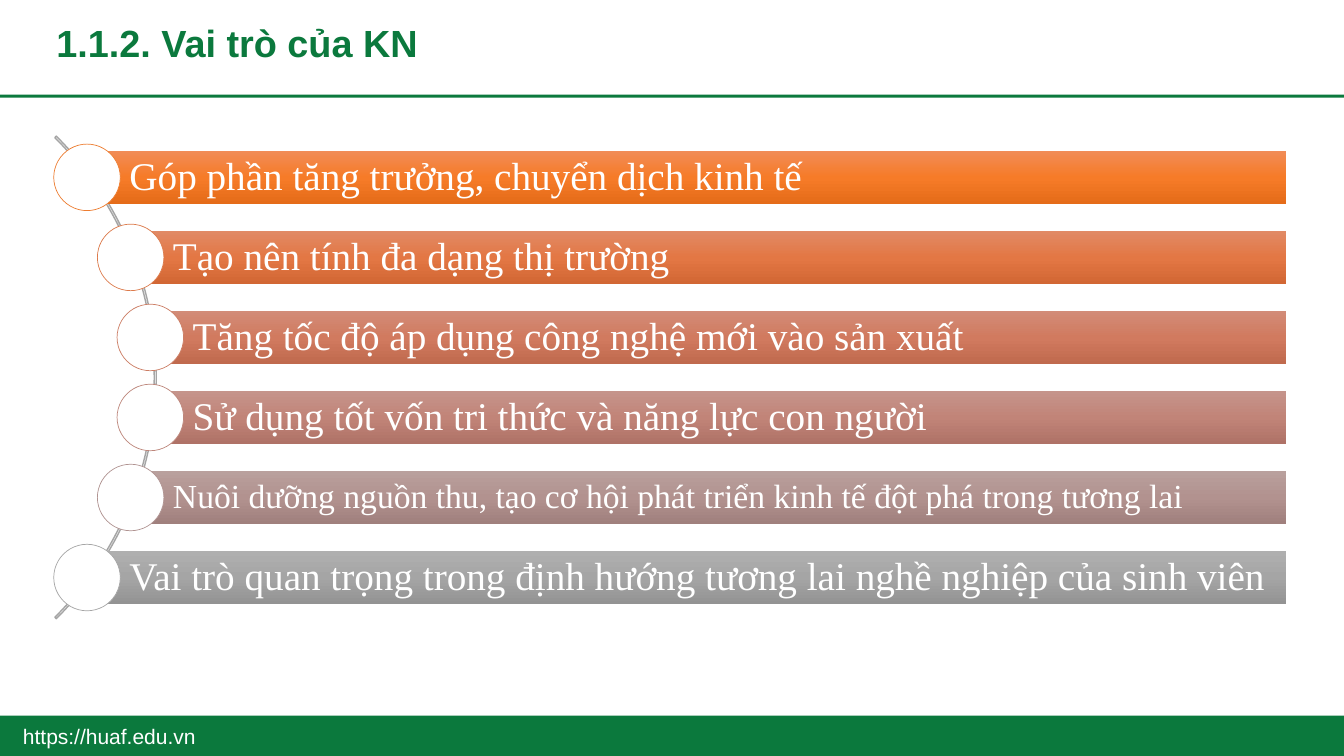
import copy
import math

import pptx
import pptx.dml.color
import pptx.enum.shapes
import pptx.enum.text
import pptx.util

Inches = pptx.util.Inches
Pt = pptx.util.Pt
MSO_SHAPE = pptx.enum.shapes.MSO_SHAPE
ANCHOR = pptx.enum.text.MSO_ANCHOR
ALIGN = pptx.enum.text.PP_ALIGN

# Content: text, size role, bar gradient (top, middle, bottom), circle outline
TITLE = "1.1.2. Vai trò của KN"
WEBSITE = "https://huaf.edu.vn"
ROLES = [
    ("Góp phần tăng trưởng, chuyển dịch kinh tế", "role",
     ("F18C57", "F67B28", "E56C19"), "ED7D31"),
    ("Tạo nên tính đa dạng thị trường", "role",
     ("E18A66", "E37744", "D26734"), "DC7A4B"),
    ("Tăng tốc độ áp dụng công nghệ mới vào sản xuất", "role",
     ("D28C78", "D17A5F", "C06A4E"), "CC7D64"),
    ("Sử dụng tốt vốn tri thức và năng lực con người", "role",
     ("C5948B", "C18478", "AF7267"), "BD867B"),
    ("Nuôi dưỡng nguồn thu, tạo cơ hội phát triển kinh tế đột phá trong tương lai",
     "long_role", ("B9A09D", "B2928F", "A0807D"), "B09391"),
    ("Vai trò quan trọng trong định hướng tương lai nghề nghiệp của sinh viên", "role",
     ("AFAFAF", "A5A5A5", "939393"), "A5A5A5"),
]

THEME = {
    "green": "0B793D", "white": "FFFFFF", "grey": "A5A5A5",
    "sans": "Arial", "serif": "Times New Roman",
    "title": 27, "role": 28, "long_role": 24, "website": 15,
}

# Layout, in inches
SLIDE_W, SLIDE_H = 13.33, 7.5
FOOTER_H = 0.4
ARC_LEFT, ARC_TOP, ARC_SIZE = -5.22, 0.36, 6.77
ARC_X, ARC_Y = ARC_LEFT + ARC_SIZE / 2, ARC_TOP + ARC_SIZE / 2
CENTRE_RADIUS = 3.35
ROW_PITCH = 0.794
BAR_RIGHT, BAR_H = 12.76, 0.53
CIRCLE = 0.66


def rgb(code):
    return pptx.dml.color.RGBColor.from_string(code)


def add_figure(slide, kind, box, fill=None, outline=None, width=1):
    figure = slide.shapes.add_shape(kind, *map(Inches, box))
    figure.shadow.inherit = False
    if fill:
        figure.fill.solid()
        figure.fill.fore_color.rgb = rgb(fill)
    else:
        figure.fill.background()
    if outline:
        figure.line.color.rgb = rgb(outline)
        figure.line.width = Pt(width)
    else:
        figure.line.fill.background()
    return figure


def shade_down(bar, colours):
    bar.fill.gradient()
    bar.fill.gradient_angle = 270
    first = bar.fill.gradient_stops[0]
    first.color.rgb = rgb(colours[0])
    stops = bar._element.spPr.find(".//" + pptx.oxml.ns.qn("a:gsLst"))
    stops.insert(1, copy.deepcopy(stops[0]))
    for i, (stop, colour) in enumerate(zip(bar.fill.gradient_stops, colours)):
        stop.position = i / 2
        stop.color.rgb = rgb(colour)


def write(holder, text, font, size, colour, bold=False, frame=None, paragraph=None):
    body = holder.text_frame
    frame_format = {"word_wrap": True, "vertical_anchor": ANCHOR.MIDDLE,
                    "auto_size": pptx.enum.text.MSO_AUTO_SIZE.NONE, **(frame or {})}
    for name, value in frame_format.items():
        setattr(body, name, value)
    body.text = text
    line = body.paragraphs[0]
    for name, value in {"alignment": ALIGN.LEFT, **(paragraph or {})}.items():
        setattr(line, name, value)
    run = line.runs[0]
    for name, value in {"name": font, "size": Pt(size), "bold": bold}.items():
        setattr(run.font, name, value)
    run.font.color.rgb = rgb(colour)


def add_role(slide, row, role):
    text, size, shades, outline = role
    centre_y = ARC_Y + (row - (len(ROLES) - 1) / 2) * ROW_PITCH
    centre_x = ARC_X + math.sqrt(CENTRE_RADIUS ** 2 - (centre_y - ARC_Y) ** 2)
    bar = add_figure(slide, MSO_SHAPE.RECTANGLE,
                     (centre_x, centre_y - BAR_H / 2, BAR_RIGHT - centre_x, BAR_H))
    shade_down(bar, shades)
    inset = Inches(0.07)
    write(bar, text, THEME["serif"], THEME[size], THEME["white"],
          frame={"margin_left": Inches(0.42), "margin_right": inset,
                 "margin_top": inset, "margin_bottom": inset},
          paragraph={"line_spacing": 0.9})
    add_figure(slide, MSO_SHAPE.OVAL,
               (centre_x - CIRCLE / 2, centre_y - CIRCLE / 2, CIRCLE, CIRCLE),
               THEME["white"], outline, 0.5)


def main():
    deck = pptx.Presentation()
    deck.slide_width, deck.slide_height = Inches(SLIDE_W), Inches(SLIDE_H)
    slide = deck.slides.add_slide(deck.slide_layouts[5])

    # Footer band and rule under the title
    footer_top = SLIDE_H - FOOTER_H
    for top, height in ((footer_top, FOOTER_H), (0.94, 0.03)):
        add_figure(slide, MSO_SHAPE.RECTANGLE, (0, top, SLIDE_W, height), THEME["green"])

    # Arc behind the roles
    arc = add_figure(slide, MSO_SHAPE.BLOCK_ARC, (ARC_LEFT, ARC_TOP, ARC_SIZE, ARC_SIZE),
                     outline=THEME["grey"])
    for i, value in enumerate((189, 27, 0.003)):
        arc.adjustments[i] = value

    # Roles along the arc
    for row, role in enumerate(ROLES):
        add_role(slide, row, role)

    # Website
    website = slide.shapes.add_textbox(*map(Inches, (0, footer_top, 2.17, FOOTER_H)))
    write(website, WEBSITE, THEME["sans"], THEME["website"], THEME["white"],
          paragraph={"alignment": ALIGN.CENTER})

    # Title
    title = slide.shapes.title
    for side, value in {"left": 0.46, "top": 0.18, "width": 12.37, "height": 0.52}.items():
        setattr(title, side, Inches(value))
    write(title, TITLE, THEME["sans"], THEME["title"], THEME["green"], bold=True,
          frame={"vertical_anchor": ANCHOR.BOTTOM}, paragraph={"line_spacing": 0.9})

    deck.save("out.pptx")


if __name__ == "__main__":
    main()
